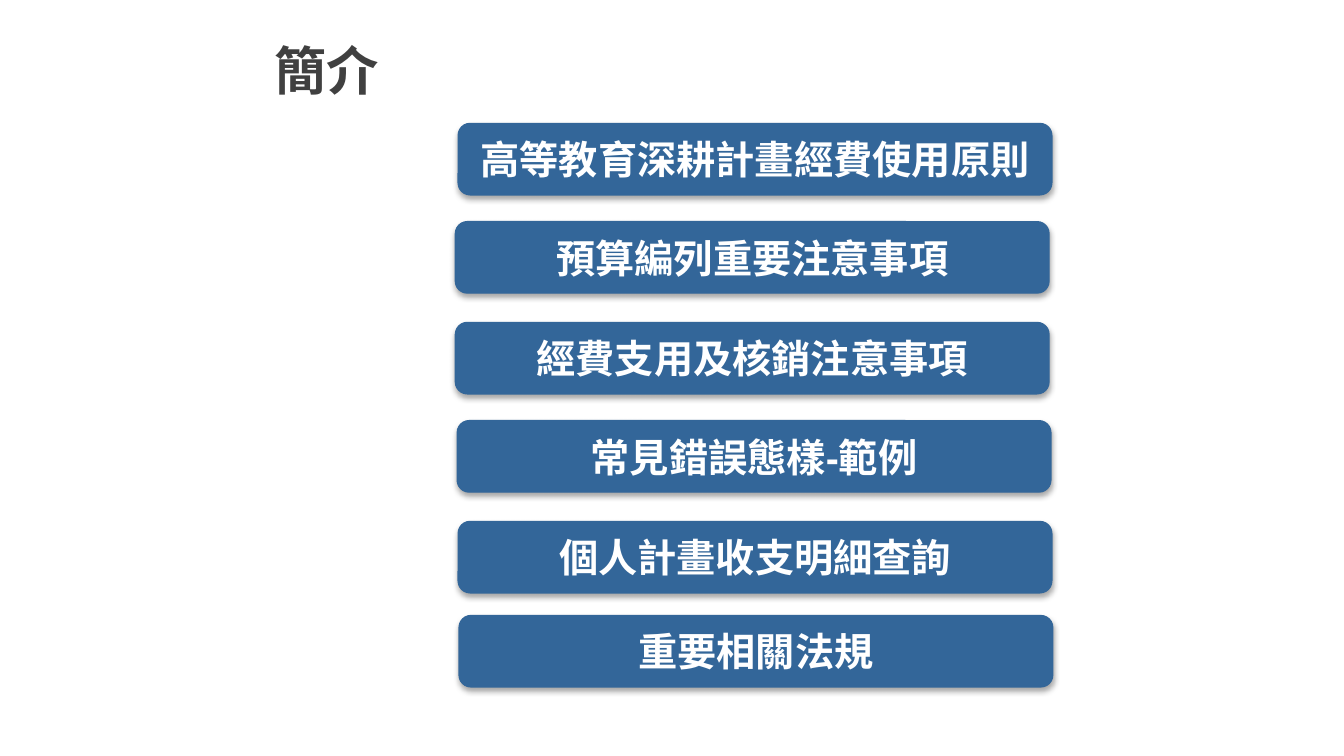
from dataclasses import dataclass

from lxml import etree
from pptx import Presentation
from pptx.dml.color import RGBColor
from pptx.enum import shapes, text
from pptx.oxml import ns, parse_xml
from pptx.util import Pt


@dataclass(frozen=True)
class Theme:
    title_color: RGBColor = RGBColor(0x40, 0x40, 0x40)
    bar_color: RGBColor = RGBColor(0x33, 0x66, 0x99)
    bar_text: RGBColor = RGBColor(0xFF, 0xFF, 0xFF)
    title_size: Pt = Pt(28)
    bar_size: Pt = Pt(21)
    latin: str = "Arial"
    cjk: str = "Noto Sans CJK SC"


THEME = Theme()
BAR_WIDTH, BAR_HEIGHT = Pt(318), Pt(38.2)

# left, top, topic
TOPICS = [
    (245.5, 66.2, "高等教育深耕計畫經費使用原則"),
    (244, 118.8, "預算編列重要注意事項"),
    (244, 172.8, "經費支用及核銷注意事項"),
    (245, 225.4, "常見錯誤態樣-範例"),
    (245.5, 279.4, "個人計畫收支明細查詢"),
    (246, 329.8, "重要相關法規"),
]

SHADOW = (
    f'<a:effectLst {ns.nsdecls("a")}>'
    '<a:outerShdw blurRad="40000" dist="23000" dir="5400000" rotWithShape="0">'
    '<a:srgbClr val="000000"><a:alpha val="35000"/></a:srgbClr>'
    "</a:outerShdw></a:effectLst>"
)


def write_text(s, words, align, frame, font):
    """Fill a shape with one bold, vertically centred line."""
    tf = s.text_frame
    frame = {"word_wrap": True, "vertical_anchor": text.MSO_ANCHOR.MIDDLE, **frame}
    for name, value in frame.items():
        setattr(tf, name, value)
    p = tf.paragraphs[0]
    p.alignment = align
    r = p.add_run()
    r.text = words
    r.font.color.rgb = font.pop("color")
    for name, value in {"bold": True, **font}.items():
        setattr(r.font, name, value)
    ea = etree.SubElement(r.font._element, ns.qn("a:ea"))
    ea.set("typeface", THEME.cjk)


def add_title(slide, words):
    s = slide.shapes.title
    s.left, s.top, s.width, s.height = Pt(127.5), Pt(2.2), Pt(592.5), Pt(69.8)
    write_text(
        s, words, text.PP_ALIGN.LEFT,
        {"margin_left": Pt(19.5), "auto_size": text.MSO_AUTO_SIZE.NONE},
        {"name": THEME.cjk, "size": THEME.title_size, "color": THEME.title_color},
    )


def add_bar(slide, left, top, words):
    s = slide.shapes.add_shape(
        shapes.MSO_SHAPE.ROUNDED_RECTANGLE, Pt(left), Pt(top), BAR_WIDTH, BAR_HEIGHT
    )
    s.fill.solid()
    s.fill.fore_color.rgb = THEME.bar_color
    s.line.color.rgb = THEME.bar_color
    s.line.width = Pt(0.75)
    s._element.spPr.append(parse_xml(SHADOW))
    write_text(
        s, words, text.PP_ALIGN.CENTER, {},
        {"name": THEME.latin, "size": THEME.bar_size, "color": THEME.bar_text},
    )


def main():
    prs = Presentation()
    prs.slide_width, prs.slide_height = Pt(720), Pt(405)
    slide = prs.slides.add_slide(prs.slide_layouts[5])
    add_title(slide, "簡介")
    for left, top, words in TOPICS:
        add_bar(slide, left, top, words)
    prs.save("out.pptx")


if __name__ == "__main__":
    main()
